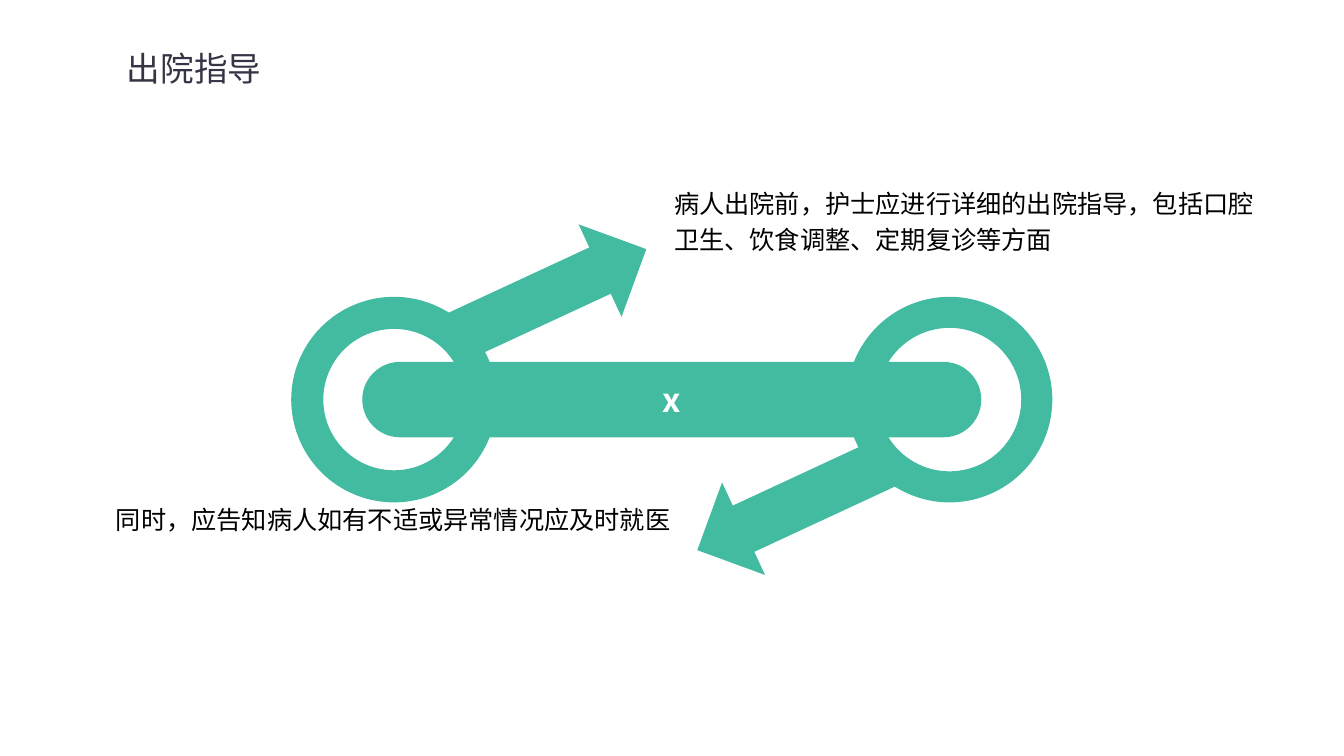
from pptx import Presentation
from pptx.dml.color import RGBColor
from pptx.enum.shapes import MSO_SHAPE as Shape
from pptx.enum.text import MSO_ANCHOR as Anchor, PP_ALIGN as Align
from pptx.oxml.ns import qn
from pptx.util import Cm, Pt
from lxml.etree import SubElement

COLORS = {"title": "373545", "teal": "42BBA1", "body": "000000", "label": "FFFFFF"}
FONT = "Noto Sans CJK SC"


def write(text_frame, text, size, color, bold=False, align=Align.LEFT,
          anchor=Anchor.TOP, line_spacing=1.0, space=0):
    text_frame.word_wrap = True
    text_frame.vertical_anchor = anchor
    paragraph = text_frame.paragraphs[0]
    paragraph.alignment = align
    paragraph.line_spacing = line_spacing
    paragraph.space_before = paragraph.space_after = Pt(space)
    run = paragraph.add_run()
    run.text = text
    run.font.name = FONT
    run.font.size = Pt(size)
    run.font.bold = bold
    run.font.color.rgb = RGBColor.from_string(COLORS[color])
    # East Asian typeface for the Chinese characters
    SubElement(run._r.get_or_add_rPr(), qn("a:ea"), typeface=FONT)


def add_text(slide, box, text, size, color, **style):
    text_box = slide.shapes.add_textbox(*map(Cm, box))
    write(text_box.text_frame, text, size, color, **style)


def add_centered(slide, kind, center_x, center_y, width, height):
    shape = slide.shapes.add_shape(
        kind, Cm(center_x - width / 2), Cm(center_y - height / 2), Cm(width), Cm(height))
    shape.shadow.inherit = False
    shape.fill.solid()
    shape.fill.fore_color.rgb = RGBColor.from_string(COLORS["teal"])
    shape.line.fill.background()
    return shape


def add_title(slide, box):
    add_text(slide, box, "出院指导", 24, "title", anchor=Anchor.MIDDLE, line_spacing=0.9)


def add_link_diagram(slide, box):
    left, top, width, height = box
    center_x, center_y = left + width / 2, top + height / 2
    ring_size = 5.18
    ring_offset = (width - ring_size) / 2

    # Arrows, half a turn apart
    for side, angle in ((-1, 65.1), (1, 245.1)):
        arrow = add_centered(slide, Shape.UP_ARROW, center_x + side * 3.06,
                             center_y + side * 2.67, 2.57, 5.33)
        arrow.rotation = angle

    # Rings
    for side, thickness in ((-1, 0.156), (1, 0.151)):
        ring = add_centered(slide, Shape.DONUT, center_x + side * ring_offset,
                            center_y, ring_size, ring_size)
        ring.adjustments[0] = thickness

    # Connecting bar
    bar = add_centered(slide, Shape.ROUNDED_RECTANGLE, center_x, center_y, 15.6, 1.9)
    bar.adjustments[0] = 0.5
    write(bar.text_frame, "x", 23.4, "label", bold=True, align=Align.CENTER,
          anchor=Anchor.MIDDLE, space=2)


def add_advice(slide, box, text, align):
    add_text(slide, box, text, 18, "body", align=align, line_spacing=1.2, space=2)


def main():
    presentation = Presentation()
    presentation.slide_width, presentation.slide_height = Cm(33.87), Cm(19.05)
    slide = presentation.slides.add_slide(presentation.slide_layouts[6])
    add_title(slide, (2.95, 1.02, 28.96, 1.52))
    add_link_diagram(slide, (7.34, 4.72, 19.18, 10.7))
    add_advice(slide, (16.74, 4.47, 15.67, 2.16),
               "病人出院前，护士应进行详细的出院指导，包括口腔卫生、饮食调整、定期复诊等方面",
               Align.LEFT)
    add_advice(slide, (1.47, 12.42, 15.67, 2.24),
               "同时，应告知病人如有不适或异常情况应及时就医", Align.RIGHT)
    presentation.save("out.pptx")


if __name__ == "__main__":
    main()
